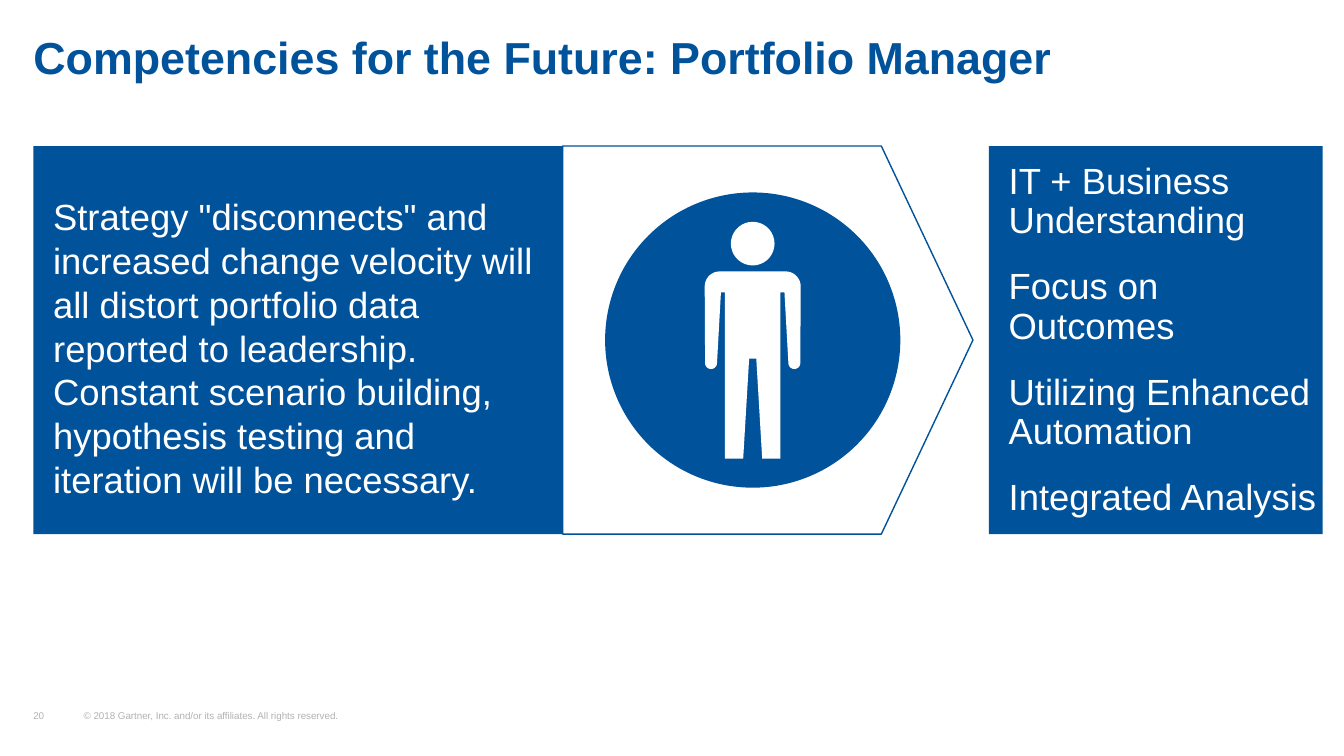
from math import cos, radians, sin

from lxml import etree
from pptx import Presentation
from pptx.dml.color import RGBColor
from pptx.enum.shapes import MSO_SHAPE
from pptx.enum.text import MSO_ANCHOR, MSO_AUTO_SIZE, PP_ALIGN
from pptx.oxml.ns import qn
from pptx.util import Cm, Pt

RECTANGLE, PENTAGON, OVAL = MSO_SHAPE.RECTANGLE, MSO_SHAPE.PENTAGON, MSO_SHAPE.OVAL
TOP, MIDDLE, BOTTOM = MSO_ANCHOR.TOP, MSO_ANCHOR.MIDDLE, MSO_ANCHOR.BOTTOM
LEFT = PP_ALIGN.LEFT
NO_AUTOFIT = MSO_AUTO_SIZE.NONE

COLORS = {"blue": "00529B", "white": "FFFFFF", "gray": "B2B2B2"}
FONT = "Arial"
MARGIN = 0.84
BAND_TOP, BAND_HEIGHT = 3.68, 9.78

CHALLENGE = (
    'Strategy "disconnects" and increased change velocity will all distort '
    "portfolio data reported to leadership. Constant scenario building, "
    "hypothesis testing and iteration will be necessary."
)
COMPETENCIES = [
    "IT + Business Understanding",
    "Focus on Outcomes",
    "Utilizing Enhanced Automation",
    "Integrated Analysis",
]


def rgb(name):
    """Return the named palette colour."""
    return RGBColor.from_string(COLORS[name])


def place(shape, box):
    """Move a shape to a box of left, top, width and height in centimetres."""
    shape.left, shape.top, shape.width, shape.height = map(Cm, box)


def paint(shape, fill, line=None):
    """Give a shape a flat fill and an optional outline, without shadow."""
    shape.shadow.inherit = False
    shape.fill.solid()
    shape.fill.fore_color.rgb = rgb(fill)
    if line:
        shape.line.color.rgb = rgb(line)
        shape.line.width = Pt(1)
    else:
        shape.line.fill.background()


def write(shape, lines, size, color, bold=False, anchor=TOP, insets=(0, 0, 0, 0),
          spacing=0.9, gap=0, tab=None):
    """Write paragraphs into a shape with the given format."""
    frame = shape.text_frame
    frame.word_wrap = True
    frame.auto_size = NO_AUTOFIT
    frame.vertical_anchor = anchor
    (frame.margin_left, frame.margin_top,
     frame.margin_right, frame.margin_bottom) = map(Cm, insets)
    for index, line in enumerate(lines):
        paragraph = frame.paragraphs[0] if index == 0 else frame.add_paragraph()
        properties = paragraph._p.get_or_add_pPr()
        properties.set("marL", "0")
        properties.set("indent", "0")
        etree.SubElement(properties, qn("a:buNone"))
        if tab:
            tabs = etree.SubElement(properties, qn("a:tabLst"))
            etree.SubElement(tabs, qn("a:tab"), pos=str(Cm(tab)), algn="l")
        paragraph.alignment = LEFT
        paragraph.line_spacing = spacing
        paragraph.space_before = Pt(gap if index else 0)
        paragraph.space_after = Pt(0)
        run = paragraph.add_run()
        run.text = line
        run.font.name = FONT
        run.font.size = Pt(size)
        run.font.bold = bold
        run.font.color.rgb = rgb(color)


def add_preset(slide, preset, box, fill, line=None):
    """Add a painted preset shape in a box."""
    shape = slide.shapes.add_shape(preset, *map(Cm, box))
    paint(shape, fill, line)
    return shape


def arc(x, y, radius, start, end, step=10):
    """Return points along a circular arc, with angles clockwise in degrees."""
    return [(x + radius * cos(radians(angle)), y + radius * sin(radians(angle)))
            for angle in range(start, end + 1, step)]


def add_person(slide, center, top):
    """Draw a standing person, symmetric about the center line."""
    half = (arc(0.83, 1.63, 0.38, -90, 0) + arc(1.05, 3.56, 0.15, 0, 180)
            + [(0.8, 1.78), (0.7, 1.78), (0.7, 5.97), (0.24, 5.97), (0.09, 3.45)])
    body = half + [(-x, y) for x, y in reversed(half)]
    head = arc(0, 0.55, 0.55, 0, 360)
    body, head = ([(Cm(center + x), Cm(top + y)) for x, y in outline]
                  for outline in (body, head))
    builder = slide.shapes.build_freeform(*body[0])
    builder.add_line_segments(body[1:])
    builder.move_to(*head[0])
    builder.add_line_segments(head[1:])
    paint(builder.convert_to_shape(), "white")


def add_title(slide, box):
    """Fill the title placeholder."""
    title = slide.shapes.title
    place(title, box)
    write(title, ["Competencies for the Future: Portfolio Manager"], 32, "blue",
          bold=True, insets=(0, 0.25, 0, 0))


def add_challenge(slide, box):
    """Add the panel that describes the challenge."""
    panel = add_preset(slide, RECTANGLE, box, "blue")
    write(panel, [CHALLENGE], 26, "white", anchor=MIDDLE,
          insets=(0.5, 0.5, 0.25, 0.13), spacing=Pt(31.2))


def add_role(slide, box):
    """Add the arrow panel with the person in a disc."""
    left, top, _, height = box
    arrow = add_preset(slide, PENTAGON, box, "white", "blue")
    arrow.adjustments[0] = 0.236
    diameter = 7.44
    disc_left, disc_top = left + 1.07, top + (height - diameter) / 2
    add_preset(slide, OVAL, (disc_left, disc_top, diameter, diameter), "blue")
    add_person(slide, disc_left + diameter / 2, disc_top + 0.74)


def add_competencies(slide, box):
    """Fill the body placeholder with the list of competencies."""
    panel = slide.placeholders[1]
    place(panel, box)
    panel.fill.solid()
    panel.fill.fore_color.rgb = rgb("blue")
    write(panel, COMPETENCIES, 26, "white", anchor=MIDDLE,
          insets=(0.5, 0.13, 0, 0.13), spacing=Pt(28.2), gap=19)


def add_footer(slide, box):
    """Add the page number and the copyright line."""
    footer = slide.shapes.add_textbox(*map(Cm, box))
    write(footer, ["20\t© 2018 Gartner, Inc. and/or its affiliates. All rights reserved."],
          7, "gray", anchor=BOTTOM, tab=0.64)


def main():
    """Build the slide and save it."""
    deck = Presentation()
    deck.slide_width, deck.slide_height = Cm(33.87), Cm(19.05)
    slide = deck.slides.add_slide(deck.slide_layouts[1])
    add_title(slide, (MARGIN, 0.64, 32.16, 1.5))
    add_challenge(slide, (MARGIN, BAND_TOP, 13.34, BAND_HEIGHT))
    add_role(slide, (MARGIN + 13.34, BAND_TOP, 10.34, BAND_HEIGHT))
    add_competencies(slide, (24.92, BAND_TOP, 8.41, BAND_HEIGHT))
    add_footer(slide, (MARGIN, 17.91, 8.2, 0.28))
    deck.save("out.pptx")


if __name__ == "__main__":
    main()
